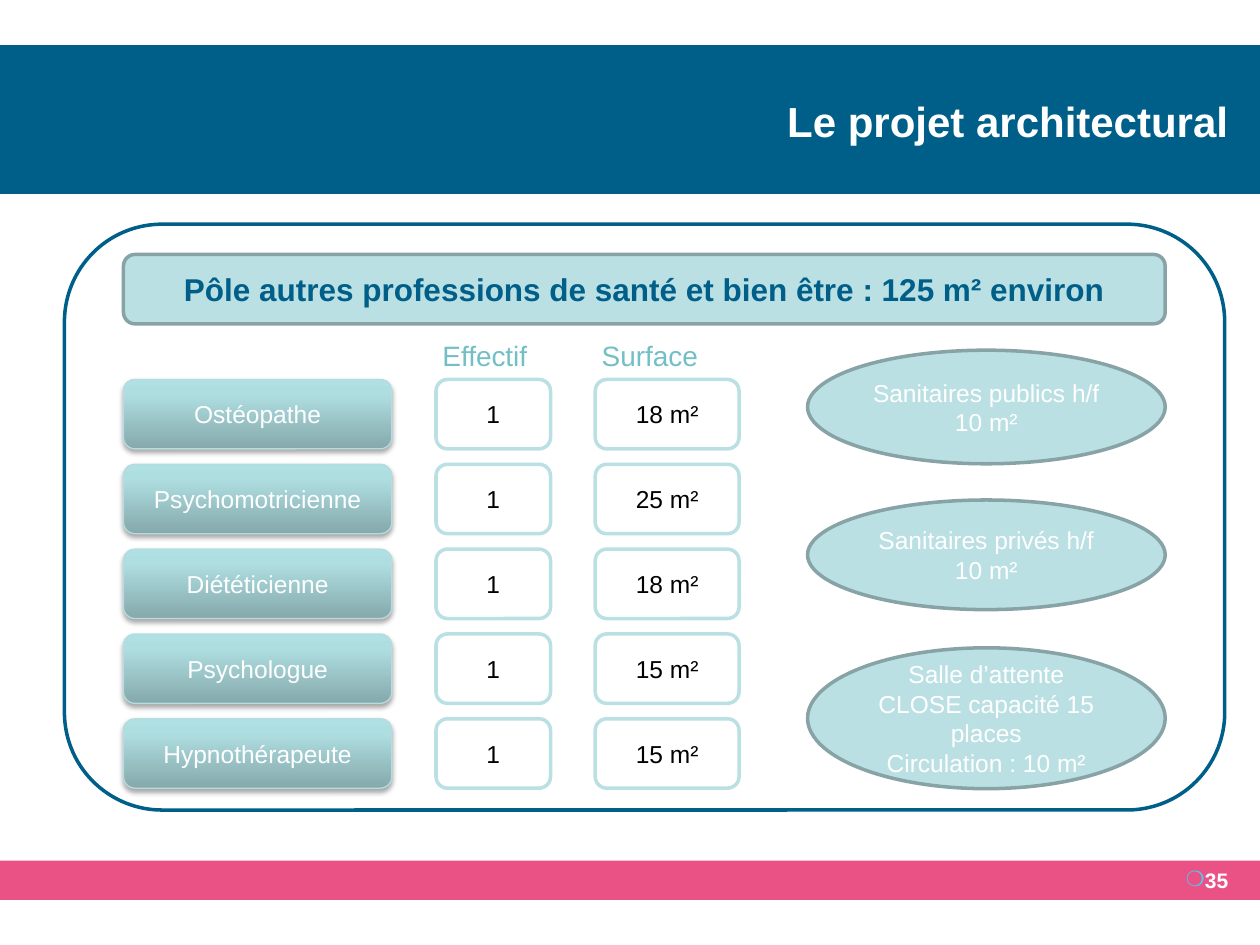
import copy

import lxml.etree
import pptx
import pptx.dml.color
import pptx.enum.shapes
import pptx.enum.text
import pptx.oxml
import pptx.oxml.ns
import pptx.util

Cm = pptx.util.Cm
Pt = pptx.util.Pt
SHAPE = pptx.enum.shapes.MSO_SHAPE
ALIGN = pptx.enum.text.PP_ALIGN
ANCHOR = pptx.enum.text.MSO_ANCHOR
qn = pptx.oxml.ns.qn

COLOURS = {
    "navy": "005F89",
    "pink": "EA5285",
    "aqua": "BBE0E3",
    "grey": "88A3A6",
    "teal": "72BFC5",
    "edge": "B6DCDF",
    "bullet": "4FC8F3",
    "white": "FFFFFF",
    "black": "000000",
    "role dark": "85A9AC",
    "role light": "AFDEE1",
    "role top": "AFE0E4",
}
ROLE_STOPS = [(0, "role dark"), (0.8, "role light"), (1, "role top")]
STAFF = [
    ("Ostéopathe", "1", "18 m²"),
    ("Psychomotricienne", "1", "25 m²"),
    ("Diététicienne", "1", "18 m²"),
    ("Psychologue", "1", "15 m²"),
    ("Hypnothérapeute", "1", "15 m²"),
]
ROOMS = [
    (0, 2.29, "Sanitaires publics h/f 10 m²"),
    (3.02, 2.21, "Sanitaires privés h/f 10 m²"),
    (6, 2.84, "Salle d’attente CLOSE capacité 15 places\nCirculation : 10 m²"),
]


def rgb(name):
    return pptx.dml.color.RGBColor.from_string(COLOURS[name])


def write(box, text, size, colour, align=ALIGN.CENTER, bold=False, anchor=ANCHOR.MIDDLE):
    frame = box.text_frame
    frame.text = text
    frame.word_wrap = True
    frame.vertical_anchor = anchor
    frame.margin_left = frame.margin_right = Cm(0.13)
    frame.margin_top = frame.margin_bottom = Cm(0.13)
    for para in frame.paragraphs:
        para.alignment = align
        for span in para.runs:
            span.font.name = "Arial"
            span.font.size = Pt(size)
            span.font.bold = bold
            span.font.color.rgb = rgb(colour)


def add_box(page, kind, area, fill=None, line=None, width=2):
    box = page.shapes.add_shape(kind, *(Cm(length) for length in area))
    box.shadow.inherit = False
    if fill:
        box.fill.solid()
        box.fill.fore_color.rgb = rgb(fill)
    else:
        box.fill.background()
    if line:
        box.line.color.rgb = rgb(line)
        box.line.width = Pt(width)
    else:
        box.line.fill.background()
    return box


def add_label(page, area, *args, **options):
    box = page.shapes.add_textbox(*(Cm(length) for length in area))
    write(box, *args, **options)
    return box


def add_bullet(para, mark):
    properties = para._p.get_or_add_pPr()
    properties.set("marL", "0")
    properties.set("indent", "0")
    colour = lxml.etree.SubElement(properties, qn("a:buClr"))
    lxml.etree.SubElement(colour, qn("a:srgbClr"), val=COLOURS["bullet"])
    lxml.etree.SubElement(properties, qn("a:buFont"), typeface="Arial")
    lxml.etree.SubElement(properties, qn("a:buChar"), char=mark)


def shade_role(box):
    box.fill.gradient()
    box.fill.gradient_angle = 90
    properties = box.element.spPr
    stops = properties.find(qn("a:gradFill")).find(qn("a:gsLst"))
    stops.append(copy.deepcopy(stops[-1]))
    for stop, (position, colour) in zip(box.fill.gradient_stops, ROLE_STOPS):
        stop.position = position
        stop.color.rgb = rgb(colour)
    effects = properties.find(qn("a:effectLst"))
    shadow = lxml.etree.SubElement(
        effects, qn("a:outerShdw"), blurRad=str(Pt(3)), dist=str(Pt(1.8)),
        dir="5400000", rotWithShape="0")
    colour = lxml.etree.SubElement(shadow, qn("a:srgbClr"), val=COLOURS["black"])
    lxml.etree.SubElement(colour, qn("a:alpha"), val="35000")


def add_header(page, left, top, width, height):
    title = page.shapes.title
    band = add_box(page, SHAPE.RECTANGLE, (left, top, width, height), "navy")
    title.element.addprevious(band.element)
    title.left, title.top = Cm(left + 6.58), Cm(top + 0.03)
    title.width, title.height = Cm(width - 7.09), Cm(height)
    write(title, "Le projet architectural", 24, "white", ALIGN.RIGHT, bold=True)


def add_footer(page, left, top, width, height):
    add_box(page, SHAPE.RECTANGLE, (left, top, width, height), "pink")
    number = add_label(page, (left + width - 2.31, top, 1.8, 0.74), "35", 12, "white",
                       ALIGN.RIGHT, bold=True, anchor=ANCHOR.TOP)
    add_bullet(number.text_frame.paragraphs[0], "❍")


def add_staff(page, left, top, row_height, pitch):
    count_left, area_left = left + 6.3, left + 9.51
    for text, column, width in (("Effectif", count_left, 2.31), ("Surface", area_left, 2.9)):
        add_label(page, (column, top - 0.95, width, 0.86), text, 16, "teal",
                  ALIGN.LEFT, anchor=ANCHOR.TOP)
    for index, (role, count, area) in enumerate(STAFF):
        y = top + index * pitch
        name = add_box(page, SHAPE.ROUNDED_RECTANGLE, (left, y, 5.41, row_height),
                       line="edge", width=0.75)
        shade_role(name)
        write(name, role, 14, "white")
        for text, column, width in ((count, count_left, 2.31), (area, area_left, 2.9)):
            cell = add_box(page, SHAPE.ROUNDED_RECTANGLE, (column, y, width, row_height),
                           "white", "aqua")
            write(cell, text, 14, "black")


def add_rooms(page, left, top, width):
    for offset, height, text in ROOMS:
        room = add_box(page, SHAPE.OVAL, (left, top + offset, width, height), "aqua", "grey")
        write(room, text, 14, "white")


def add_unit(page, left, top, width, height):
    add_box(page, SHAPE.ROUNDED_RECTANGLE, (left, top, width, height), line="navy")
    inner_left = left + 1.19
    banner = add_box(page, SHAPE.ROUNDED_RECTANGLE, (inner_left, top + 0.61, 21, 1.4),
                     "aqua", "grey")
    write(banner, "Pôle autres professions de santé et bien être : 125 m² environ",
          18, "navy", bold=True)
    add_staff(page, inner_left, top + 3.13, 1.4, 1.71)
    add_rooms(page, inner_left + 13.79, top + 2.54, 7.21)


def main():
    deck = pptx.Presentation()
    deck.slide_width, deck.slide_height = Cm(25.4), Cm(19.05)
    page = deck.slides.add_slide(deck.slide_layouts.get_by_name("Title Only"))
    add_header(page, 0, 0.91, 25.4, 3)
    add_footer(page, 0, 17.35, 25.4, 0.79)
    add_unit(page, 1.3, 4.52, 23.39, 11.81)
    deck.save("out.pptx")


if __name__ == "__main__":
    main()
